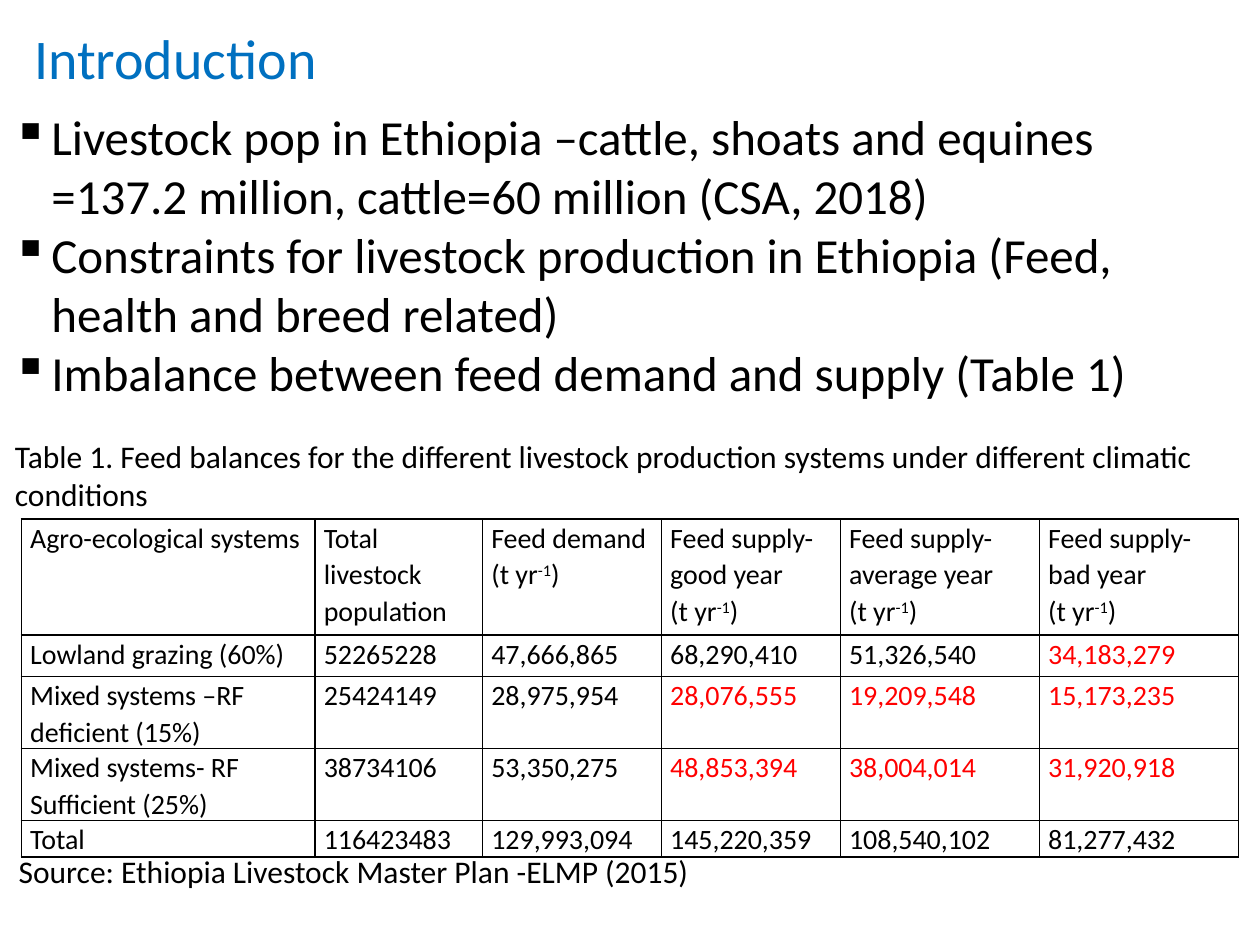
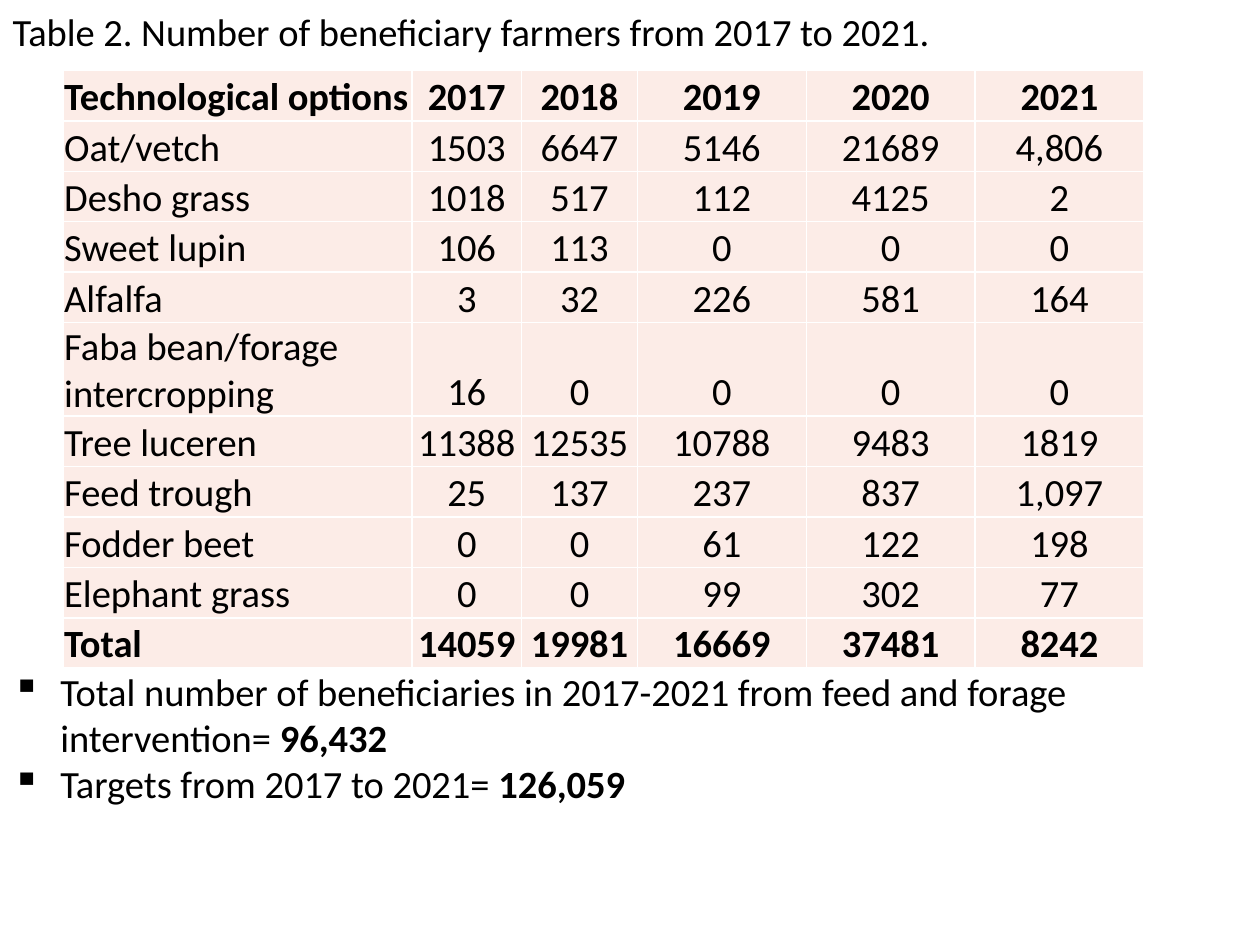
"""Build two slides on feed balances and beneficiary farmers in Ethiopia."""
from dataclasses import dataclass

from lxml import etree
from pptx import Presentation
from pptx.dml.color import RGBColor
from pptx.enum import text as t
from pptx.oxml.ns import qn
from pptx.util import Inches, Pt


@dataclass(frozen=True)
class Theme:
    font: str = "Calibri"
    ink: str = "000000"
    heading: str = "0070C0"
    deficit: str = "FF0000"
    grid: str = "FFFFFF"
    band: str = "FCECE7"
    title: int = 32
    body: int = 28
    results: int = 22
    note: int = 18
    balance: int = 16


theme = Theme()
BOLD = ("b", "1")
SUPERSCRIPT = ("baseline", "30000")


def write(frame, lines, size, color=theme.ink, mark=BOLD, indent=0, align=t.PP_ALIGN.LEFT, spacing=1.0):
    """Write one paragraph per line; text between bars takes the mark, an indent adds a bullet."""
    frame.word_wrap = True
    for number, line in enumerate(lines):
        paragraph = frame.paragraphs[0] if number == 0 else frame.add_paragraph()
        paragraph.alignment = align
        paragraph.line_spacing = spacing
        if indent:
            properties = paragraph._p.get_or_add_pPr()
            properties.set("marL", str(Inches(indent)))
            properties.set("indent", str(-Inches(indent)))
            etree.SubElement(properties, qn("a:buChar")).set("char", "▪")
        for position, piece in enumerate(line.split("|")):
            if not piece:
                continue
            run = paragraph.add_run()
            run.text = piece
            run.font.name = theme.font
            run.font.size = Pt(size)
            run.font.color.rgb = RGBColor.from_string(color)
            if position % 2:
                run._r.get_or_add_rPr().set(*mark)


def place_table(slide, left, top, widths, heights, margins, border, fill=None):
    """Add an empty table with the given grid, margins, border colour and fill."""
    table = slide.shapes.add_table(
        len(heights), len(widths), Inches(left), Inches(top),
        Inches(sum(widths)), Inches(sum(heights))).table
    table.first_row = table.horz_banding = False
    for column, width in zip(table.columns, widths):
        column.width = Inches(width)
    for row, height in zip(table.rows, heights):
        row.height = Inches(height)
    for cell in table.iter_cells():
        cell.margin_left, cell.margin_top, cell.margin_right, cell.margin_bottom = map(Inches, margins)
        if fill:
            cell.fill.solid()
            cell.fill.fore_color.rgb = RGBColor.from_string(fill)
        else:
            cell.fill.background()
        properties = cell._tc.get_or_add_tcPr()
        for order, side in enumerate(("a:lnL", "a:lnR", "a:lnT", "a:lnB")):
            line = etree.Element(qn(side), w=str(Pt(1)))
            paint = etree.SubElement(line, qn("a:solidFill"))
            etree.SubElement(paint, qn("a:srgbClr")).set("val", border)
            properties.insert(order, line)
    return table


deck = Presentation()
deck.slide_width, deck.slide_height = Inches(10), Inches(7.5)
title_only = deck.slide_layouts[5]
introduction = deck.slides.add_slide(title_only)
beneficiaries = deck.slides.add_slide(title_only)

headings = [
    (introduction, "Introduction", (0.17, 0.14, 6.25, 0.64), theme.title, theme.heading),
    (beneficiaries, "Table 2. Number of beneficiary farmers from 2017 to 2021.",
     (0, 0.01, 7.92, 0.47), theme.results, theme.ink),
]
for slide, wording, place, size, color in headings:
    heading = slide.shapes.title
    heading.left, heading.top, heading.width, heading.height = map(Inches, place)
    heading.text_frame.vertical_anchor = t.MSO_ANCHOR.TOP
    heading.text_frame.auto_size = t.MSO_AUTO_SIZE.NONE
    write(heading.text_frame, [wording], size, color)

passages = [
    (introduction, (0, 0.8, 9.93, 2.46), theme.body, 0.31, 1.0, [
        "Livestock pop in Ethiopia –cattle, shoats and equines =137.2 million, cattle=60 million (CSA, 2018)",
        "Constraints for livestock production in Ethiopia (Feed, health and breed related)",
        "Imbalance between feed demand and supply (Table 1)"]),
    (introduction, (0.02, 3.42, 9.88, 0.71), theme.note, 0, 1.0, [
        "Table 1. Feed balances for the different livestock production systems under different climatic conditions"]),
    (introduction, (0.05, 6.69, 9.67, 0.41), theme.note, 0, 1.07, [
        "Source: Ethiopia Livestock Master Plan -ELMP (2015)"]),
    (beneficiaries, (0, 5.25, 9.92, 1.21), theme.results, 0.38, 1.0, [
        "Total number of beneficiaries in 2017-2021 from feed and forage intervention= |96,432|",
        "Targets from 2017 to 2021= |126,059|"]),
]
for slide, place, size, indent, spacing, lines in passages:
    passage = slide.shapes.add_textbox(*map(Inches, place))
    write(passage.text_frame, lines, size, indent=indent, spacing=spacing)

unit = "(t yr|-1|)"
balance_rows = [
    ["Agro-ecological systems", "Total livestock\npopulation", f"Feed demand\n{unit}",
     *(f"Feed supply-\n{year} year\n{unit}" for year in ("good", "average", "bad"))],
    ["Lowland grazing (60%)", "52265228", "47,666,865", "68,290,410", "51,326,540", "34,183,279"],
    ["Mixed systems –RF deficient (15%)", "25424149", "28,975,954", "28,076,555", "19,209,548", "15,173,235"],
    ["Mixed systems- RF Sufficient (25%)", "38734106", "53,350,275", "48,853,394", "38,004,014", "31,920,918"],
    ["Total", "116423483", "129,993,094", "145,220,359", "108,540,102", "81,277,432"],
]
balance = place_table(
    introduction, 0.17, 4.12, [2.33, 1.33, 1.42, 1.42, 1.58, 1.58],
    [0.92, 0.33, 0.57, 0.57, 0.29], (0.07, 0, 0.07, 0), theme.ink)
for r, row in enumerate(balance_rows):
    is_system = 0 < r < len(balance_rows) - 1
    for c, value in enumerate(row):
        short = is_system and c > 2 and int(value.replace(",", "")) < int(row[2].replace(",", ""))
        write(balance.cell(r, c).text_frame, value.split("\n"), theme.balance,
              theme.deficit if short else theme.ink, SUPERSCRIPT, spacing=1.07)

farmer_rows = [
    ["Technological options", "2017", "2018", "2019", "2020", "2021"],
    ["Oat/vetch", "1503", "6647", "5146", "21689", "4,806"],
    ["Desho grass", "1018", "517", "112", "4125", "2"],
    ["Sweet lupin", "106", "113", "0", "0", "0"],
    ["Alfalfa", "3", "32", "226", "581", "164"],
    ["Faba bean/forage intercropping", "16", "0", "0", "0", "0"],
    ["Tree luceren", "11388", "12535", "10788", "9483", "1819"],
    ["Feed trough", "25", "137", "237", "837", "1,097"],
    ["Fodder beet", "0", "0", "61", "122", "198"],
    ["Elephant grass", "0", "0", "99", "302", "77"],
    ["Total", "14059", "19981", "16669", "37481", "8242"],
]
farmers = place_table(
    beneficiaries, 0.5, 0.56, [2.77, 0.87, 0.92, 1.34, 1.34, 1.34],
    [0.4] * len(farmer_rows), (0.01, 0.01, 0.01, 0), theme.grid, theme.band)
for r, row in enumerate(farmer_rows):
    for c, value in enumerate(row):
        cell = farmers.cell(r, c)
        cell.vertical_anchor = t.MSO_ANCHOR.BOTTOM
        wording = f"|{value}|" if r in (0, len(farmer_rows) - 1) else value
        write(cell.text_frame, [wording], theme.results,
              align=t.PP_ALIGN.CENTER if c else t.PP_ALIGN.LEFT)

deck.save("out.pptx")
